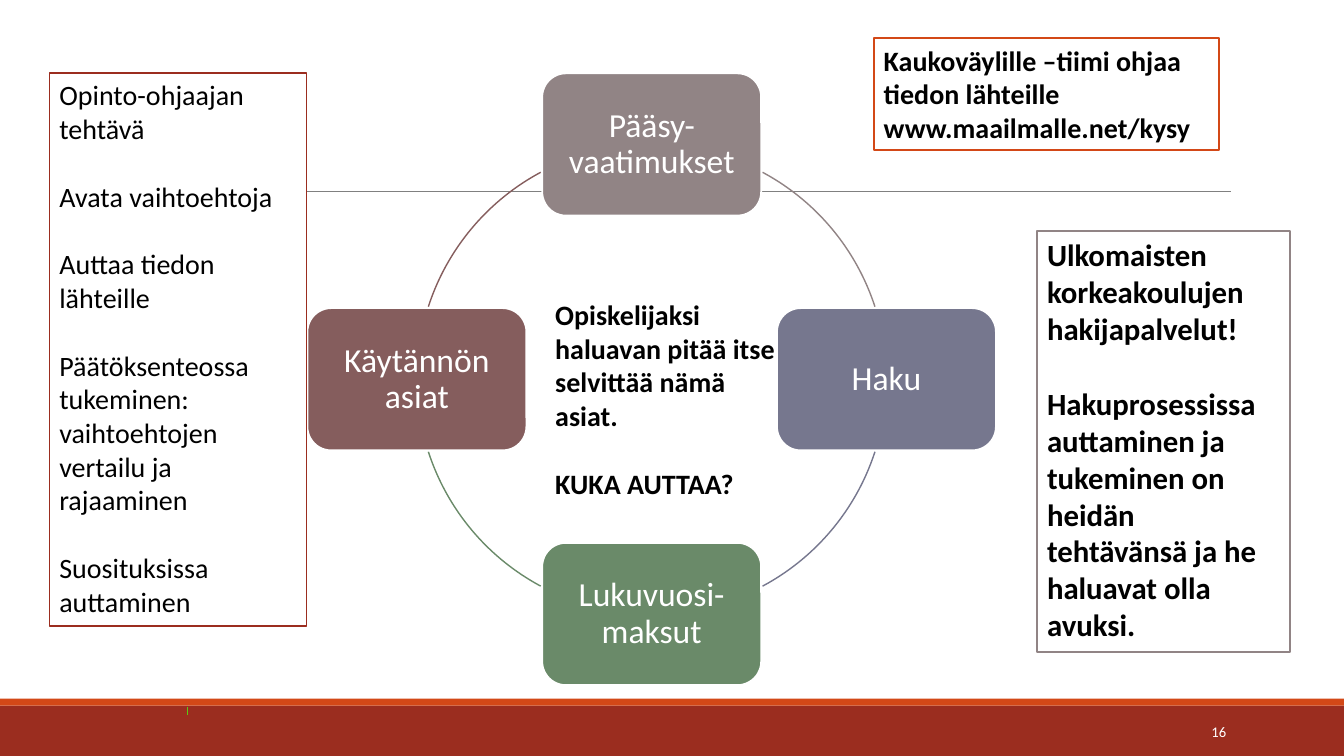
from math import cos, radians, sin

from lxml.etree import SubElement
from pptx import Presentation
from pptx.dml.color import RGBColor
from pptx.enum.shapes import MSO_CONNECTOR as Connector, MSO_SHAPE as Shape
from pptx.enum.text import MSO_ANCHOR as Anchor, PP_ALIGN as Align
from pptx.oxml.ns import qn
from pptx.util import Pt

COLORS = {
    "white": "FFFFFF", "black": "000000", "brick": "9B2D1F", "orange": "D34817",
    "gray": "808080", "green": "5BCA13", "taupe": "918485", "slate": "76778E",
    "sage": "6A8A69", "plum": "855D5D",
}
FONT = "Calibri"
PAGE_WIDTH, PAGE_HEIGHT = 960, 540
LINE_HEIGHT = 1.22

# Label, colour, direction from the centre, start and end of the following arc
STEPS = [
    ("Pääsy-vaatimukset", "taupe", 270, 298.2, 342),
    ("Haku", "slate", 0, 18, 61.8),
    ("Lukuvuosi-maksut", "sage", 90, 118.2, 162),
    ("Käytännön asiat", "plum", 180, 198, 241.8),
]


def color(name):
    return RGBColor.from_string(COLORS[name])


def add_box(page, kind, box, fill=None, line=None, weight=1.25):
    shape = page.shapes.add_shape(kind, *map(Pt, box))
    shape.shadow.inherit = False
    if fill:
        shape.fill.solid()
        shape.fill.fore_color.rgb = color(fill)
    else:
        shape.fill.background()
    if line:
        shape.line.color.rgb = color(line)
        shape.line.width = Pt(weight)
    else:
        shape.line.fill.background()
    return shape


def add_line(page, ends, line, weight):
    rule = page.shapes.add_connector(Connector.STRAIGHT, *map(Pt, ends))
    rule.line.color.rgb = color(line)
    rule.line.width = Pt(weight)
    SubElement(rule.element.spPr, qn("a:effectLst"))


def write(shape, texts, size, ink="black", bold=False, align=Align.LEFT,
          anchor=Anchor.TOP, gaps=()):
    """Write one paragraph per text, with an empty line's height before those in gaps."""
    frame = shape.text_frame
    frame.word_wrap = True
    frame.vertical_anchor = anchor
    for index, text in enumerate(texts):
        para = frame.paragraphs[0] if index == 0 else frame.add_paragraph()
        para.text = text
        para.alignment = align
        para.font.name = FONT
        para.font.size = Pt(size)
        para.font.bold = bold
        para.font.color.rgb = color(ink)
        if index in gaps:
            para.space_before = Pt(size * LINE_HEIGHT)
    return frame


def draw_frame(page):
    # Footer bands, title rule and footer tick
    add_box(page, Shape.RECTANGLE, (0, 504, PAGE_WIDTH, 36), "brick")
    add_box(page, Shape.RECTANGLE, (0, 499, PAGE_WIDTH, 5), "orange")
    add_line(page, (94.5, 136.6, 879, 136.6), "gray", 0.5)
    add_line(page, (134, 505, 134, 510.5), "green", 1.25)
    # Slide number
    number = page.shapes.add_textbox(Pt(780), Pt(508.5), Pt(103), Pt(28.75))
    write(number, ["16"], 10.5, "white", align=Align.RIGHT, anchor=Anchor.MIDDLE)


def draw_cycle(page, box):
    left, top, width, height = box
    node_width, node_height = 156.4, 101.6
    center_x, center_y = left + width / 2, top + height / 2
    radius = (height - node_height) / 2
    circle = (center_x - radius, center_y - radius, 2 * radius, 2 * radius)
    for label, tint, direction, start, end in STEPS:
        # Step
        x = center_x + radius * cos(radians(direction)) - node_width / 2
        y = center_y + radius * sin(radians(direction)) - node_height / 2
        node = add_box(page, Shape.ROUNDED_RECTANGLE,
                       (x, y, node_width, node_height), tint, "white")
        frame = write(node, [label], 24, "white", align=Align.CENTER,
                      anchor=Anchor.MIDDLE)
        frame.margin_top = frame.margin_bottom = Pt(7.2)
        frame.paragraphs[0].line_spacing = 0.9
        # Arc to the next step; its adjustments count 0.6 per degree
        arc = add_box(page, Shape.ARC, circle, line=tint, weight=1)
        arc.adjustments[0] = start * 0.6
        arc.adjustments[1] = end * 0.6
    # Question in the middle
    question = page.shapes.add_textbox(
        Pt(center_x - 76), Pt(center_y - 62), Pt(180), Pt(152.7))
    write(question, ["Opiskelijaksi haluavan pitää itse selvittää nämä asiat.",
                     "KUKA AUTTAA?"], 20, bold=True, gaps=(1,))


def draw_note(page, box, line, texts, size, bold=True, gaps=()):
    note = add_box(page, Shape.RECTANGLE, box, "white", line)
    write(note, texts, size, bold=bold, gaps=gaps)


def main():
    deck = Presentation()
    deck.slide_width, deck.slide_height = Pt(PAGE_WIDTH), Pt(PAGE_HEIGHT)
    page = deck.slides.add_slide(deck.slide_layouts[6])
    draw_frame(page)
    draw_cycle(page, (219.5, 52.4, 492, 437))
    # Notes on who helps
    draw_note(page, (624.2, 27.2, 246.4, 80), "orange",
              ["Kaukoväylille –tiimi ohjaa tiedon lähteille",
               "www.maailmalle.net/kysy"], 20)
    draw_note(page, (35.3, 52, 183.6, 395.2), "brick",
              ["Opinto-ohjaajan tehtävä", "Avata vaihtoehtoja",
               "Auttaa tiedon lähteille",
               "Päätöksenteossa tukeminen: vaihtoehtojen vertailu ja rajaaminen",
               "Suosituksissa auttaminen"], 20, bold=False, gaps=(1, 2, 3, 4))
    draw_note(page, (740.8, 165, 180.7, 300.5), "taupe",
              ["Ulkomaisten korkeakoulujen hakijapalvelut!",
               "Hakuprosessissa auttaminen ja tukeminen on heidän tehtävänsä "
               "ja he haluavat olla avuksi."], 22, gaps=(1,))
    deck.save("out.pptx")


if __name__ == "__main__":
    main()
